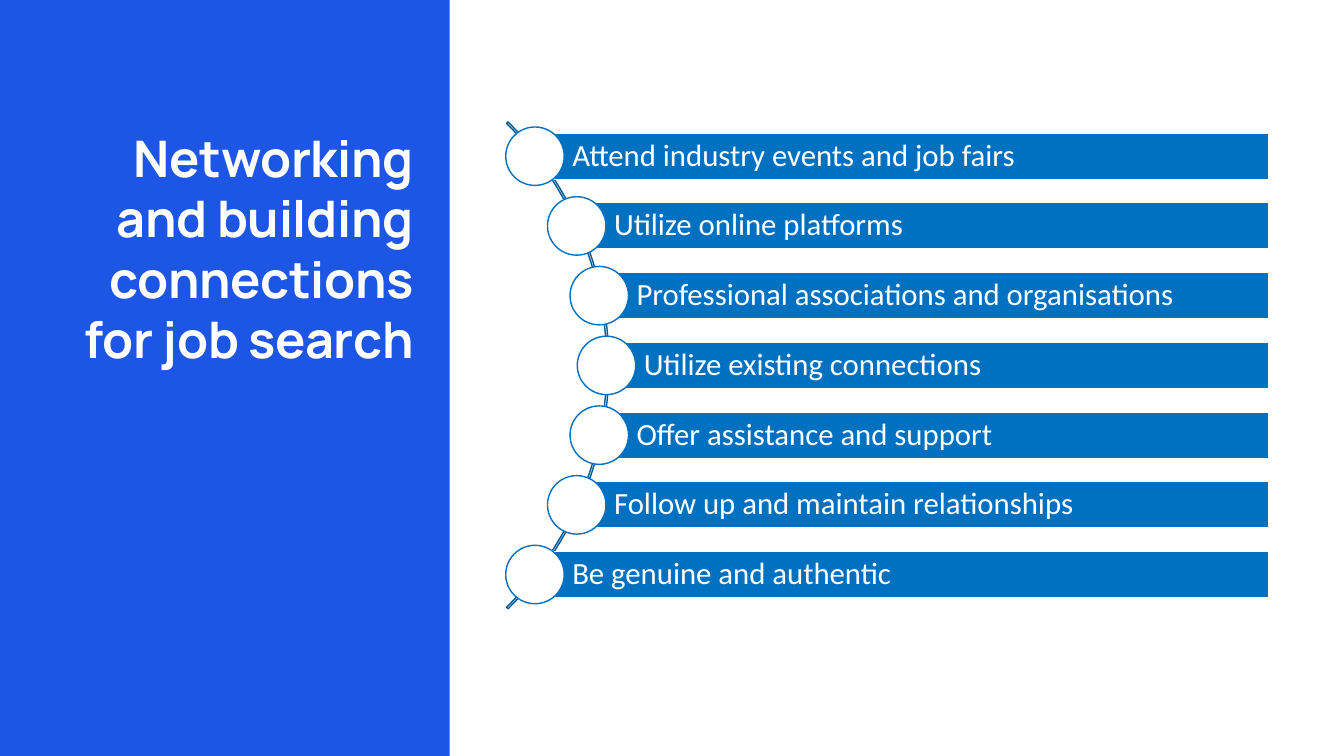
from dataclasses import dataclass
from math import sqrt

from pptx import Presentation
from pptx.dml.color import RGBColor
from pptx.enum.shapes import MSO_SHAPE
from pptx.enum.text import MSO_ANCHOR, PP_ALIGN
from pptx.util import Inches, Pt


@dataclass(frozen=True)
class Theme:
    panel = RGBColor.from_string("1D55E5")
    bar = RGBColor.from_string("0070C0")
    arc = RGBColor.from_string("005A9A")
    white = RGBColor.from_string("FFFFFF")
    title_font = "Manrope"
    body_font = "Calibri"
    title_size = Pt(36)
    body_size = Pt(22)
    line_width = Pt(1)


theme = Theme()

TIPS = [
    "Attend industry events and job fairs",
    "Utilize online platforms",
    "Professional associations and organisations",
    "Utilize existing connections",
    "Offer assistance and support",
    "Follow up and maintain relationships",
    "Be genuine and authentic",
]

# Arc and row geometry, in inches
ARC_LEFT, ARC_TOP, ARC_SIZE = -0.79, 0.21, 6.83
CENTER_X = ARC_LEFT + ARC_SIZE / 2
CENTER_Y = ARC_TOP + ARC_SIZE / 2
ROW_RADIUS = 3.39
ROW_GAP = 4.15 / (len(TIPS) - 1)
BAR_RIGHT, BAR_HEIGHT = 12.58, 0.46
DOT_SIZE = 0.58

presentation = Presentation()
presentation.slide_width = Inches(13.33)
presentation.slide_height = Inches(7.5)
slide = presentation.slides.add_slide(presentation.slide_layouts[6])


def add_shape(kind, left, top, width, height, fill, line):
    """Add a shape placed in inches; None leaves out the fill or line."""
    shape = slide.shapes.add_shape(
        kind, Inches(left), Inches(top), Inches(width), Inches(height))
    shape.shadow.inherit = False
    if fill is None:
        shape.fill.background()
    else:
        shape.fill.solid()
        shape.fill.fore_color.rgb = fill
    if line is None:
        shape.line.fill.background()
    else:
        shape.line.color.rgb = line
        shape.line.width = theme.line_width
    return shape


def style_text(paragraph, font_name, size, alignment):
    paragraph.alignment = alignment
    font = paragraph.runs[0].font
    font.name = font_name
    font.size = size
    font.color.rgb = theme.white
    return font


# Title panel
add_shape(MSO_SHAPE.RECTANGLE, 0, 0, 4.46, 7.5, theme.panel, None)
title = slide.shapes.add_textbox(
    Inches(0.69), Inches(1.21), Inches(3.51), Inches(5.34))
title.text_frame.word_wrap = True
title.text_frame.text = "Networking and building connections for job search"
title_font = style_text(title.text_frame.paragraphs[0], theme.title_font,
                        theme.title_size, PP_ALIGN.RIGHT)
title_font.bold = True
title.text_frame.paragraphs[0].runs[0]._r.get_or_add_rPr().set("spc", "-20")

# Arc behind the tips
arc = add_shape(MSO_SHAPE.BLOCK_ARC, ARC_LEFT, ARC_TOP, ARC_SIZE, ARC_SIZE,
                None, theme.arc)
arc.adjustments[0] = 189
arc.adjustments[1] = 27
arc.adjustments[2] = 0.003

# Tips whose dots follow the arc
for index, tip in enumerate(TIPS):
    offset = (index - (len(TIPS) - 1) / 2) * ROW_GAP
    row_x = CENTER_X + sqrt(ROW_RADIUS ** 2 - offset ** 2)
    row_y = CENTER_Y + offset

    bar = add_shape(MSO_SHAPE.RECTANGLE, row_x, row_y - BAR_HEIGHT / 2,
                    BAR_RIGHT - row_x, BAR_HEIGHT, theme.bar, theme.white)
    text_frame = bar.text_frame
    text_frame.word_wrap = True
    text_frame.vertical_anchor = MSO_ANCHOR.MIDDLE
    text_frame.margin_left = Inches(0.37)
    text_frame.margin_right = Inches(0.06)
    text_frame.margin_top = text_frame.margin_bottom = Inches(0.06)
    text_frame.text = tip
    paragraph = text_frame.paragraphs[0]
    paragraph.line_spacing = 0.9
    style_text(paragraph, theme.body_font, theme.body_size, PP_ALIGN.LEFT)

    add_shape(MSO_SHAPE.OVAL, row_x - DOT_SIZE / 2, row_y - DOT_SIZE / 2,
              DOT_SIZE, DOT_SIZE, theme.white, theme.bar)

presentation.save("out.pptx")
